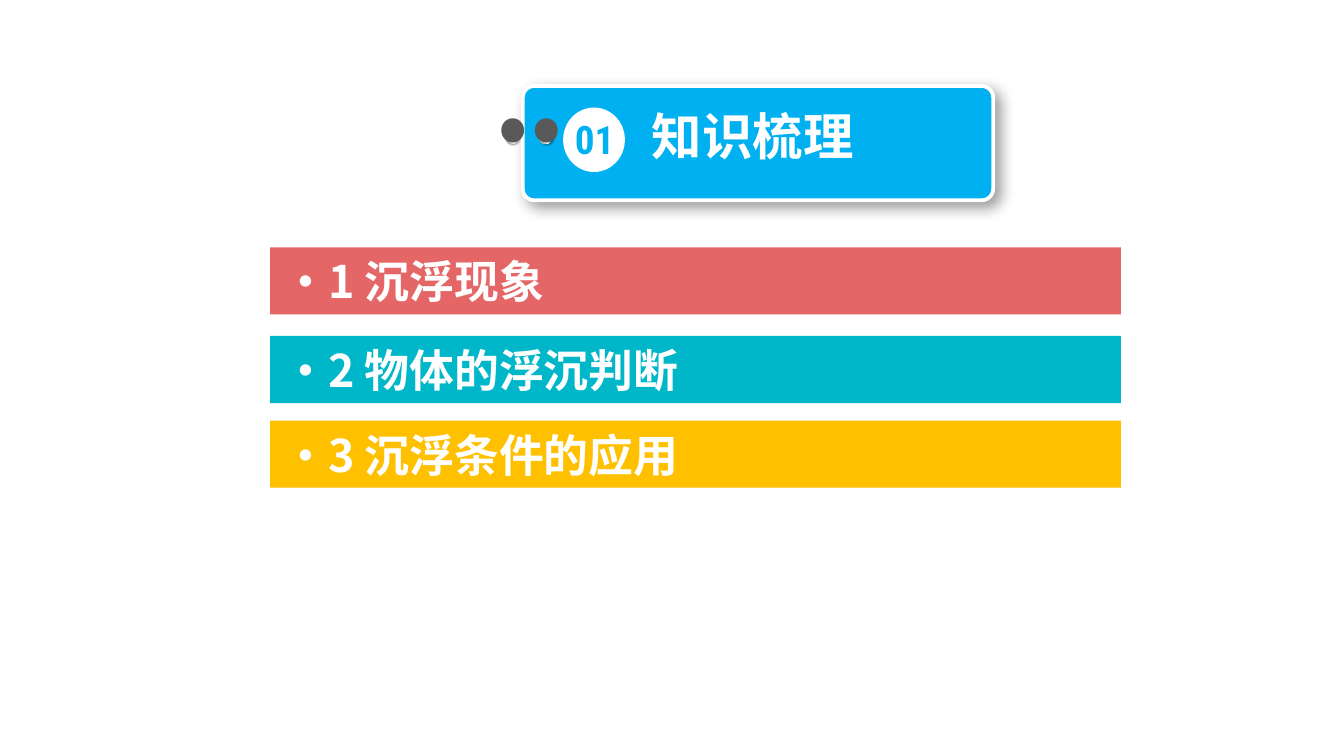
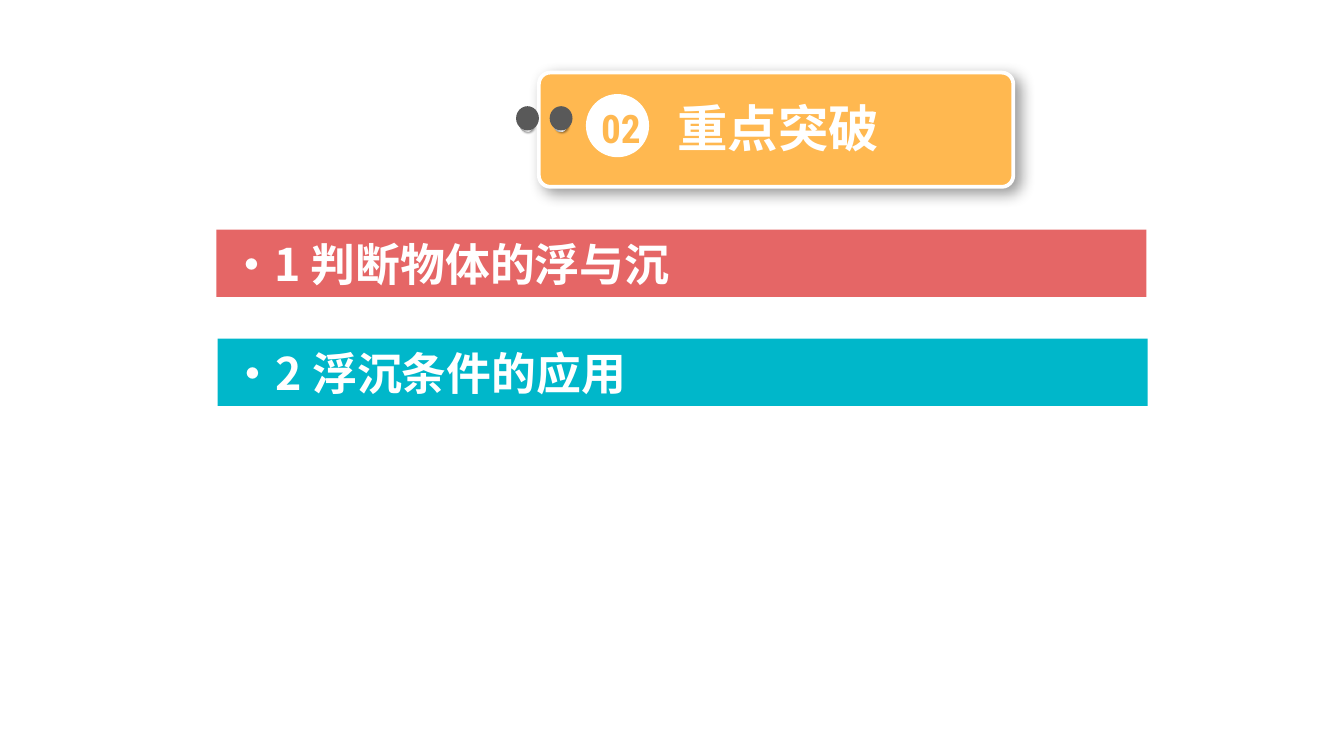
from lxml.etree import SubElement
from pptx import Presentation
from pptx.dml.color import RGBColor
from pptx.enum.shapes import MSO_SHAPE
from pptx.enum.text import MSO_ANCHOR, PP_ALIGN
from pptx.oxml.ns import qn
from pptx.util import Inches, Pt

WHITE = RGBColor(0xFF, 0xFF, 0xFF)
BLUE = RGBColor(0x00, 0xB0, 0xF0)
ORANGE = RGBColor(0xFF, 0xB8, 0x50)
RED = RGBColor(0xE5, 0x66, 0x66)
TEAL = RGBColor(0x00, 0xB7, 0xCA)
YELLOW = RGBColor(0xFF, 0xC0, 0x00)
DARK = RGBColor(0x59, 0x59, 0x59)
METAL = [(0, "FFFFFF"), (17, "A6A6A6"), (35, "F2F2F2"),
         (55, "A6A6A6"), (75, "F2F2F2"), (100, "A6A6A6")]
CJK = "Noto Sans CJK SC"
NUMERAL = "Roboto Condensed"


def add_text(shape, text, size, color, font=CJK, align=PP_ALIGN.CENTER,
             anchor=MSO_ANCHOR.TOP, left=0, top=0.05):
    """Write one bold line into a shape."""
    frame = shape.text_frame
    frame.word_wrap = True
    frame.vertical_anchor = anchor
    frame.margin_left, frame.margin_top = Inches(left), Inches(top)
    frame.margin_right = frame.margin_bottom = 0
    line = frame.paragraphs[0]
    line.alignment = align
    run = line.add_run()
    run.text = text
    run.font.size, run.font.bold, run.font.name = Pt(size), True, font
    run.font.color.rgb = color
    SubElement(run.font._element, qn("a:ea")).set("typeface", font)


def add_panel(parent, preset, x, y, width, height, color=None, shadow=None):
    """Draw a borderless shape; without a colour it gets the metal gradient."""
    shape = parent.add_shape(preset, Inches(x), Inches(y), Inches(width), Inches(height))
    shape.line.fill.background()
    if color is not None:
        shape.fill.solid()
        shape.fill.fore_color.rgb = color
    else:
        shape.fill.gradient()
        shape.fill.gradient_angle = 315
        stops = shape.element.spPr.find(".//" + qn("a:gsLst"))
        for stop in list(stops):
            stops.remove(stop)
        for position, tone in METAL:
            stop = SubElement(stops, qn("a:gs"), pos=str(position * 1000))
            SubElement(stop, qn("a:srgbClr"), val=tone)
    shape.shadow.inherit = False
    if shadow:
        blur, distance = shadow
        effects = shape.element.spPr.find(qn("a:effectLst"))
        outer = SubElement(effects, qn("a:outerShdw"), blurRad=str(Pt(blur)),
                           dist=str(Pt(distance)), dir="2700000", algn="tl", rotWithShape="0")
        black = SubElement(outer, qn("a:srgbClr"), val="000000")
        SubElement(black, qn("a:alpha"), val="40000")
    return shape


# Per slide: sign, first knob, badge, number box, title box, then the topic bars
SECTIONS = [
    dict(number="01", title="知识梳理", color=BLUE,
         sign=(3.89, 0.64, 3.5, 0.85), knob=(3.73, 0.88), badge=(4.19, 0.8, 0.46, 0.48),
         number_box=(4.16, 0.81, 0.53, 0.45), title_box=(4.49, 0.73, 2.22, 0.56),
         bar_width=6.33,
         topics=[("·1 沉浮现象", RED, 2.01, 1.84),
                 ("·2 物体的浮沉判断", TEAL, 2.01, 2.5),
                 ("·3 沉浮条件的应用", YELLOW, 2.01, 3.13)]),
    dict(number="02", title="重点突破", color=ORANGE,
         sign=(4.01, 0.54, 3.53, 0.85), knob=(3.84, 0.79), badge=(4.36, 0.7, 0.47, 0.47),
         number_box=(4.34, 0.73, 0.56, 0.45), title_box=(4.55, 0.67, 2.48, 0.56),
         bar_width=6.92,
         topics=[("·1 判断物体的浮与沉", RED, 1.61, 1.71),
                 ("·2 浮沉条件的应用", TEAL, 1.62, 2.52)]),
]

# 16:9 page
deck = Presentation()
deck.slide_width, deck.slide_height = Inches(10), Inches(10 * 9 / 16)

for section in SECTIONS:
    slide = deck.slides.add_slide(deck.slide_layouts[6])

    # Section sign
    header = slide.shapes.add_group_shape().shapes
    sign = add_panel(header, MSO_SHAPE.ROUNDED_RECTANGLE, *section["sign"],
                     section["color"], shadow=(8, 4))
    sign.adjustments[0] = 0.1
    sign.line.color.rgb = WHITE
    sign.line.width = Pt(2)

    # Knobs, each over a metal stud
    knob_x, knob_y = section["knob"]
    for x in (knob_x + 0.25, knob_x):
        stud = add_panel(header, MSO_SHAPE.OVAL, x + 0.03, knob_y + 0.09, 0.1, 0.1,
                         shadow=(1, 1))
        stud.rotation = 270
        add_panel(header, MSO_SHAPE.OVAL, x, knob_y, 0.17, 0.18, DARK)

    # Number badge and title
    add_panel(header, MSO_SHAPE.OVAL, *section["badge"], WHITE)
    number = header.add_textbox(*map(Inches, section["number_box"]))
    add_text(number, section["number"], 21, section["color"], font=NUMERAL)
    title = header.add_textbox(*map(Inches, section["title_box"]))
    add_text(title, section["title"], 27, WHITE)

    # Topic bars
    for topic, color, x, y in section["topics"]:
        bar = add_panel(slide.shapes, MSO_SHAPE.RECTANGLE, x, y,
                        section["bar_width"], 0.5, color)
        add_text(bar, topic, 24, WHITE, align=PP_ALIGN.LEFT,
                 anchor=MSO_ANCHOR.MIDDLE, left=0.1, top=0)

deck.save("out.pptx")
